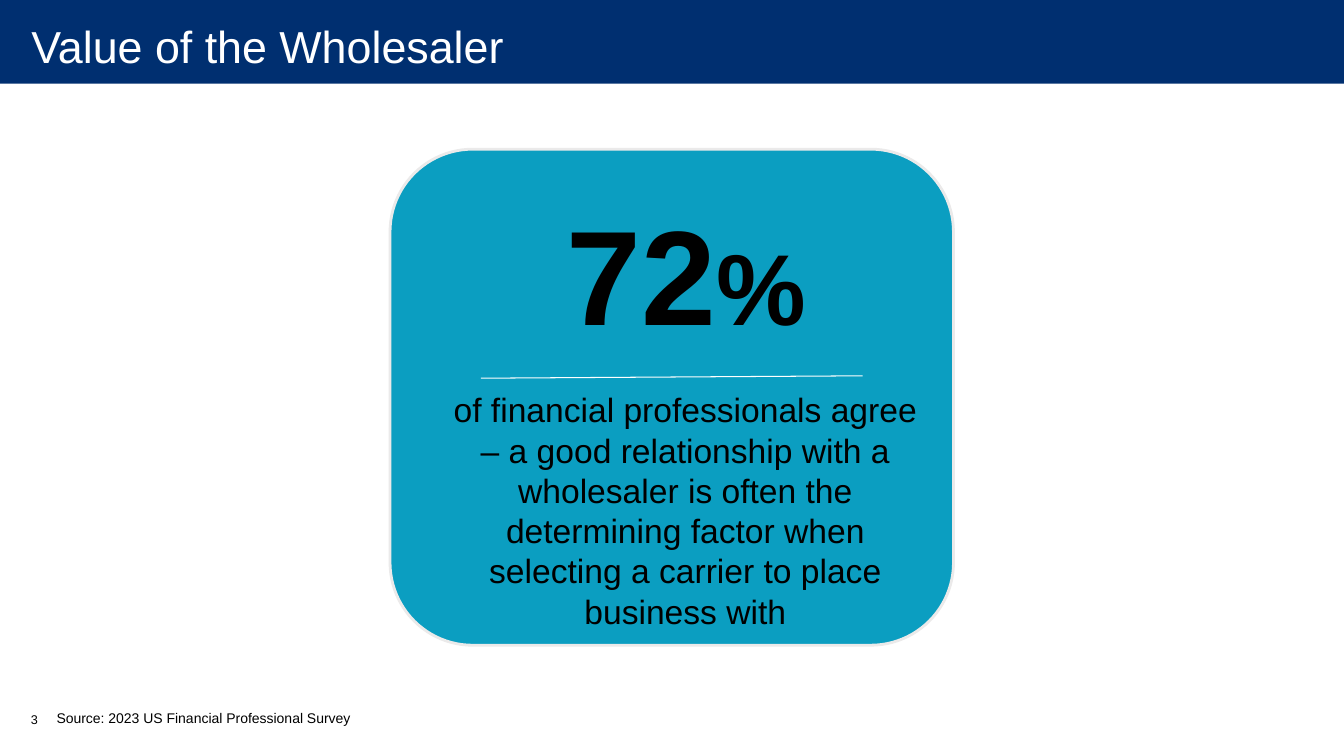
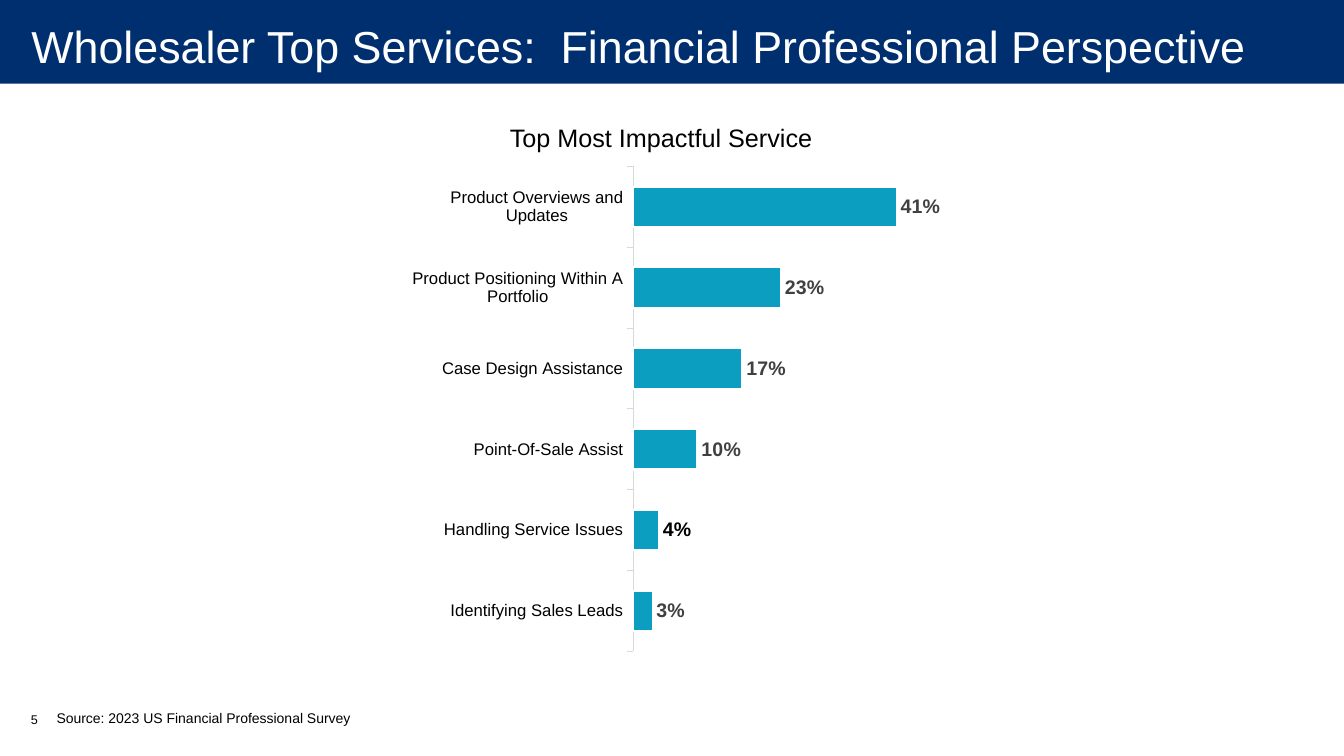
from lxml import etree
from pptx import Presentation
from pptx.chart.data import CategoryChartData
from pptx.dml.color import RGBColor
from pptx.enum.chart import XL_CHART_TYPE, XL_LABEL_POSITION, XL_TICK_MARK
from pptx.enum.shapes import MSO_CONNECTOR, MSO_SHAPE
from pptx.enum.text import MSO_ANCHOR, MSO_AUTO_SIZE, PP_ALIGN
from pptx.oxml import parse_xml
from pptx.oxml.ns import nsdecls, qn
from pptx.util import Cm, Pt

LEFT, CENTER = PP_ALIGN.LEFT, PP_ALIGN.CENTER
MIDDLE, BOTTOM = MSO_ANCHOR.MIDDLE, MSO_ANCHOR.BOTTOM
NO_FIT = MSO_AUTO_SIZE.NONE
RECT, ROUND_RECT = MSO_SHAPE.RECTANGLE, MSO_SHAPE.ROUNDED_RECTANGLE
STRAIGHT = MSO_CONNECTOR.STRAIGHT
BAR = XL_CHART_TYPE.BAR_CLUSTERED
OUTSIDE_END = XL_LABEL_POSITION.OUTSIDE_END
TICK_OUT, TICK_NONE = XL_TICK_MARK.OUTSIDE, XL_TICK_MARK.NONE

NAVY = RGBColor(0x00, 0x2F, 0x70)
TEAL = RGBColor(0x0B, 0x9E, 0xC1)
WHITE = RGBColor(0xFF, 0xFF, 0xFF)
BLACK = RGBColor(0x00, 0x00, 0x00)
PALE_GREY = RGBColor(0xEB, 0xEA, 0xEA)
AXIS_GREY = RGBColor(0xD9, 0xD9, 0xD9)
LABEL_GREY = RGBColor(0x40, 0x40, 0x40)

FONT = "Arial"
SLIDE_W, SLIDE_H = 33.87, 19.05
SOURCE = "Source: 2023 US Financial Professional Survey"
SERVICES = [
    ("Identifying Sales Leads", 0.03),
    ("Handling Service Issues", 0.04),
    ("Point-Of-Sale Assist", 0.10),
    ("Case Design Assistance", 0.17),
    ("Product Positioning Within A Portfolio", 0.23),
    ("Product Overviews and Updates", 0.41),
]


# Text and shapes
def set_font(font, size, color=BLACK, bold=False):
    font.name, font.size, font.bold = FONT, Pt(size), bold
    font.color.rgb = color


def write(p, text, size, color=BLACK, bold=False, align=LEFT):
    p.alignment = align
    r = p.add_run()
    r.text = text
    set_font(r.font, size, color, bold)


def place(sp, x, y, w, h):
    sp.left, sp.top, sp.width, sp.height = Cm(x), Cm(y), Cm(w), Cm(h)


def add_box(slide, x, y, w, h):
    """Add a wrapping text box and return its first paragraph."""
    tf = slide.shapes.add_textbox(Cm(x), Cm(y), Cm(w), Cm(h)).text_frame
    tf.word_wrap = True
    return tf.paragraphs[0]


def add_panel(slide, kind, x, y, w, h, fill, line=None):
    sp = slide.shapes.add_shape(kind, Cm(x), Cm(y), Cm(w), Cm(h))
    sp.shadow.inherit = False
    sp.fill.solid()
    sp.fill.fore_color.rgb = fill
    if line is None:
        sp.line.fill.background()
    else:
        sp.line.color.rgb = line
        sp.line.width = Pt(2)
    return sp


def add_rule(slide, x1, y1, x2, y2):
    rule = slide.shapes.add_connector(STRAIGHT, Cm(x1), Cm(y1), Cm(x2), Cm(y2))
    rule.line.color.rgb = WHITE
    rule.line.width = Pt(0.75)
    etree.SubElement(rule._element.spPr, qn("a:effectLst"))


# Shared layout
def style_layout(prs):
    """Put the band and the placeholder positions on the layout."""
    layout = prs.slide_layouts[1]
    title, body = layout.placeholders[0], layout.placeholders[1]
    place(title, 0.03, -0.08, SLIDE_W - 0.03, 2.46)
    place(body, 1.17, 16.61, 14.86, 1.83)
    return layout


def add_slide(prs, layout, title, number):
    slide = prs.slides.add_slide(layout)

    tf = slide.shapes.title.text_frame
    tf.auto_size, tf.word_wrap, tf.vertical_anchor = NO_FIT, True, MIDDLE
    tf.margin_left, tf.margin_right = Cm(0.76), Cm(0.51)
    tf.margin_top = tf.margin_bottom = 0
    write(tf.paragraphs[0], title, 32, WHITE)

    tf = slide.placeholders[1].text_frame
    tf.auto_size, tf.vertical_anchor = NO_FIT, BOTTOM
    p = tf.paragraphs[0]
    pPr = p._p.get_or_add_pPr()
    pPr.set("marL", "0")
    pPr.set("indent", "0")
    etree.SubElement(pPr, qn("a:buNone"))
    p.space_before = Pt(0)
    write(p, SOURCE, 10)

    write(add_box(slide, 0.53, 17.81, 1.24, 1.02), number, 9)
    return slide


def move_band_to_layout(slide, layout):
    band = add_panel(slide, RECT, 0, 0, SLIDE_W, 2.11, NAVY)
    layout.shapes._spTree.insert(2, band._element)


# Chart
def add_service_chart(slide, x, y, w, h):
    data = CategoryChartData(number_format="0%")
    data.categories = [name for name, _ in SERVICES]
    data.add_series("Series 1", [share for _, share in SERVICES])
    chart = slide.shapes.add_chart(
        BAR, Cm(x), Cm(y), Cm(w), Cm(h), data).chart
    chart.has_legend = chart.has_title = False
    set_font(chart.font, 10)

    axis = chart.category_axis
    axis.major_tick_mark, axis.minor_tick_mark = TICK_OUT, TICK_NONE
    axis.format.line.color.rgb = AXIS_GREY
    axis.format.line.width = Pt(0.75)
    set_font(axis.tick_labels.font, 12)
    axis = chart.value_axis
    axis.visible = axis.has_major_gridlines = False
    axis.minimum_scale, axis.maximum_scale = 0, 0.45

    plot = chart.plots[0]
    plot.gap_width, plot.vary_by_categories = 100, False
    series = plot.series[0]
    series.format.fill.solid()
    series.format.fill.fore_color.rgb = TEAL
    series.format.line.color.rgb = WHITE
    series.format.line.width = Pt(1.5)

    labels = series.data_labels
    labels.show_value = True
    labels.number_format, labels.number_format_is_linked = "0%", False
    labels.position = OUTSIDE_END
    set_font(labels.font, 14, LABEL_GREY, bold=True)
    issues_label = series.points[1].data_label
    issues_label.position = OUTSIDE_END
    set_font(issues_label.font, 14, bold=True)

    # Fixed plot area, as fractions of the chart
    area = chart._chartSpace.chart.plotArea
    for old in area.findall(qn("c:layout")):
        area.remove(old)
    sizes = {"x": 0.43, "y": 0.02, "w": 0.54, "h": 0.96}
    area.insert(0, parse_xml(
        f'<c:layout {nsdecls("c")}><c:manualLayout>'
        '<c:layoutTarget val="inner"/>'
        '<c:xMode val="edge"/><c:yMode val="edge"/>'
        + "".join(f'<c:{k} val="{v}"/>' for k, v in sizes.items())
        + '</c:manualLayout></c:layout>'))


# Slides
def build_value(slide):
    add_panel(slide, ROUND_RECT, 9.83, 3.76, 14.2, 12.5, TEAL, PALE_GREY)
    p = add_box(slide, 11.51, 4.7, 11.56, 4.37)
    write(p, "72", 96, bold=True, align=CENTER)
    write(p, "%", 72, bold=True, align=CENTER)
    write(add_box(slide, 11.1, 9.68, 12.34, 6.4),
          "of financial professionals agree – a good relationship with a "
          "wholesaler is often the determining factor when selecting a "
          "carrier to place business with", 24, align=CENTER)
    add_rule(slide, 12.12, 9.53, 21.74, 9.47)


def build_services(slide):
    add_service_chart(slide, 10.16, 3.94, 13.54, 12.73)
    write(add_box(slide, 10.46, 2.95, 12.4, 1.02),
          "Top Most Impactful Service", 18, align=CENTER)


def main():
    prs = Presentation()
    prs.slide_width, prs.slide_height = Cm(SLIDE_W), Cm(SLIDE_H)
    layout = style_layout(prs)

    value = add_slide(prs, layout, "Value of the Wholesaler", "3")
    move_band_to_layout(value, layout)
    build_value(value)
    build_services(add_slide(
        prs, layout,
        "Wholesaler Top Services:  Financial Professional Perspective", "5"))
    prs.save("out.pptx")


if __name__ == "__main__":
    main()
